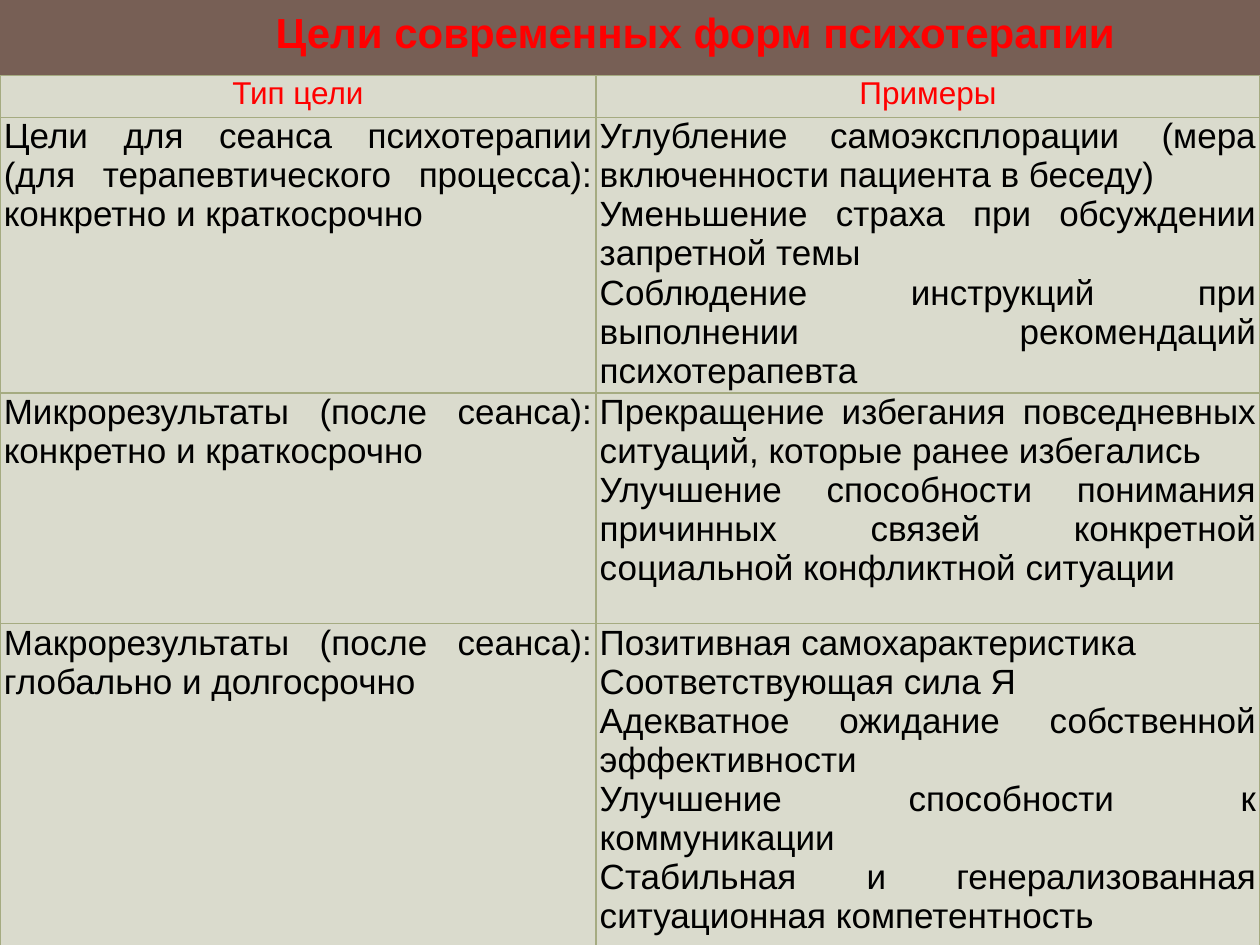
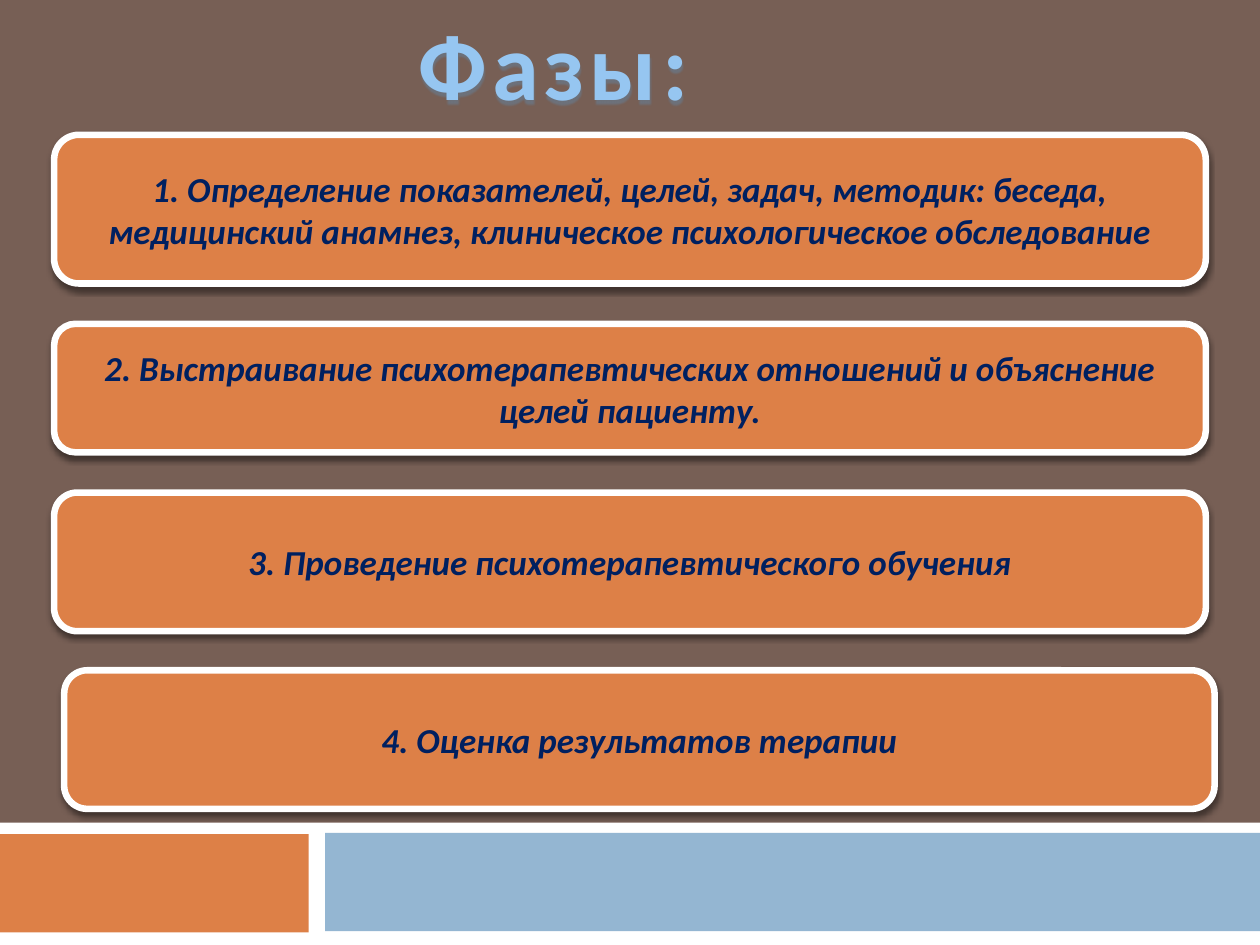
import pptx
import pptx.dml.color
import pptx.enum.shapes
import pptx.enum.text
import pptx.oxml
import pptx.oxml.ns
import pptx.util
from dataclasses import dataclass
from pptx.util import Inches

ALIGN = pptx.enum.text.PP_ALIGN
ANCHOR = pptx.enum.text.MSO_ANCHOR
SHAPE = pptx.enum.shapes.MSO_SHAPE


@dataclass(frozen=True)
class Theme:
    background: str = "775F55"
    white: str = "FFFFFF"
    orange: str = "DD8047"
    blue: str = "94B6D2"
    red: str = "FF0000"
    black: str = "000000"
    navy: str = "002060"
    cell: str = "DADBCD"
    border: str = "A5AB81"
    glow_top: str = "96C6F1"
    glow_bottom: str = "6288A7"
    glow_outline: str = "F7F9FB"
    table_font: str = "Arial"
    phase_font: str = "Calibri"
    header_size: int = 18
    body_size: int = 20
    title_size: int = 24
    display_size: int = 54


THEME = Theme()

GOALS = [
    (["Тип цели"], ["Примеры"]),
    (["Цели для сеанса психотерапии (для терапевтического процесса): конкретно и краткосрочно"],
     ["Углубление самоэксплорации (мера включенности пациента в беседу)",
      "Уменьшение страха при обсуждении запретной темы",
      "Соблюдение инструкций при выполнении рекомендаций психотерапевта"]),
    (["Микрорезультаты (после сеанса): конкретно и краткосрочно"],
     ["Прекращение избегания повседневных ситуаций, которые ранее избегались",
      "Улучшение способности понимания причинных связей конкретной социальной конфликтной ситуации"]),
    (["Макрорезультаты (после сеанса): глобально и долгосрочно"],
     ["Позитивная самохарактеристика",
      "Соответствующая сила Я",
      "Адекватное ожидание собственной эффективности",
      "Улучшение способности к коммуникации",
      "Стабильная и генерализованная ситуационная компетентность"]),
]

PHASES = [
    ((0.43, 1.07, 9.14, 1.18),
     "1. Определение показателей, целей, задач, методик: беседа, медицинский анамнез, "
     "клиническое психологическое обследование"),
    ((0.43, 2.57, 9.14, 1.02),
     "2. Выстраивание психотерапевтических отношений и объяснение целей пациенту."),
    ((0.43, 3.91, 9.14, 1.1), "3. Проведение психотерапевтического обучения"),
    ((0.51, 5.32, 9.13, 1.1), "4. Оценка результатов терапии"),
]


def rgb(color):
    return pptx.dml.color.RGBColor.from_string(color)


def drawing_xml(xml):
    namespace = pptx.oxml.ns.nsdecls("a")
    return pptx.oxml.parse_xml(xml.replace(">", f" {namespace}>", 1))


def solid_xml(color):
    return f'<a:solidFill><a:srgbClr val="{color}"/></a:solidFill>'


class Deck:
    """Builds slides in one style, element by element."""

    def __init__(self, theme):
        self.theme = theme
        self.presentation = pptx.Presentation()
        self.presentation.slide_width = Inches(10)
        self.presentation.slide_height = Inches(7.5)
        fill = self.presentation.slide_master.background.fill
        fill.solid()
        fill.fore_color.rgb = rgb(theme.background)
        self.slide = None

    def new_slide(self):
        self.slide = self.presentation.slides.add_slide(self.presentation.slide_layouts[6])
        self.shape(SHAPE.RECTANGLE, (0, 6.53, 10, 0.97), self.theme.white)
        self.shape(SHAPE.RECTANGLE, (-0.01, 6.62, 2.46, 0.78), self.theme.orange)
        self.shape(SHAPE.RECTANGLE, (2.58, 6.61, 7.42, 0.78), self.theme.blue)

    def shape(self, kind, box, color):
        shape = self.slide.shapes.add_shape(kind, *map(Inches, box))
        shape.shadow.inherit = False
        shape.fill.solid()
        shape.fill.fore_color.rgb = rgb(color)
        shape.line.fill.background()
        return shape

    def set_text(self, frame, lines, font, size, color, align, bold=False, italic=False):
        for index, line in enumerate(lines):
            paragraph = frame.add_paragraph() if index else frame.paragraphs[0]
            paragraph.text = line
            paragraph.alignment = align
            paragraph.font.name = font
            paragraph.font.size = pptx.util.Pt(size)
            paragraph.font.color.rgb = rgb(color)
            paragraph.font.bold = bold
            paragraph.font.italic = italic

    def drop_shadow(self, shape, color, blur, distance):
        shape.shadow.inherit = False
        effects = shape.element.spPr.find(pptx.oxml.ns.qn("a:effectLst"))
        effects.append(drawing_xml(
            f'<a:outerShdw blurRad="{pptx.util.Pt(blur)}" dist="{pptx.util.Pt(distance)}" '
            f'dir="5400000" rotWithShape="0"><a:srgbClr val="{color}">'
            '<a:alpha val="45000"/></a:srgbClr></a:outerShdw>'))

    def title(self, box, text, font, size, color, align, anchor):
        textbox = self.slide.shapes.add_textbox(*map(Inches, box))
        frame = textbox.text_frame
        frame.word_wrap = False
        frame.auto_size = pptx.enum.text.MSO_AUTO_SIZE.SHAPE_TO_FIT_TEXT
        frame.vertical_anchor = anchor
        self.set_text(frame, [text], font, size, color, align, bold=True)
        return textbox

    def glowing_title(self, box, text):
        theme = self.theme
        textbox = self.title(box, text, theme.phase_font, theme.display_size,
                             theme.glow_top, ALIGN.CENTER, ANCHOR.TOP)
        properties = textbox.text_frame.paragraphs[0].runs[0].font._element
        properties.set("spc", "300")
        properties.append(drawing_xml(
            f'<a:ln w="{pptx.util.Pt(0.9)}">{solid_xml(theme.glow_outline)}</a:ln>'))
        properties.append(drawing_xml(
            '<a:gradFill><a:gsLst>'
            f'<a:gs pos="10000"><a:srgbClr val="{theme.glow_top}"/></a:gs>'
            f'<a:gs pos="75000"><a:srgbClr val="{theme.glow_bottom}"/></a:gs>'
            '</a:gsLst><a:lin ang="5400000"/></a:gradFill>'))
        self.drop_shadow(textbox, theme.glow_bottom, 1, 2)

    def phase(self, box, text):
        theme = self.theme
        card = self.shape(SHAPE.ROUNDED_RECTANGLE, box, theme.orange)
        card.line.color.rgb = rgb(theme.white)
        card.line.width = pptx.util.Pt(3.75)
        self.drop_shadow(card, theme.black, 3, 2.4)
        card.text_frame.word_wrap = True
        card.text_frame.vertical_anchor = ANCHOR.MIDDLE
        self.set_text(card.text_frame, [text], theme.phase_font, theme.body_size,
                      theme.navy, ALIGN.CENTER, bold=True, italic=True)

    def cell(self, cell, lines, is_header):
        theme = self.theme
        cell.margin_left = cell.margin_right = Inches(0.03)
        cell.margin_top = cell.margin_bottom = 0
        properties = cell._tc.get_or_add_tcPr()
        for side in "LRTB":
            properties.append(drawing_xml(
                f'<a:ln{side} w="{pptx.util.Pt(0.79)}">{solid_xml(theme.border)}</a:ln{side}>'))
        cell.fill.solid()
        cell.fill.fore_color.rgb = rgb(theme.cell)
        size, color, align = (
            (theme.header_size, theme.red, ALIGN.CENTER) if is_header
            else (theme.body_size, theme.black, ALIGN.JUSTIFY))
        self.set_text(cell.text_frame, lines, theme.table_font, size, color, align)

    def table(self, box, widths, heights, rows):
        table = self.slide.shapes.add_table(
            len(rows), len(widths), *map(Inches, box)).table
        table.first_row = table.horz_banding = False
        for column, width in zip(table.columns, widths):
            column.width = Inches(width)
        for row, height, texts in zip(table.rows, heights, rows):
            row.height = Inches(height)
            for cell, lines in zip(row.cells, texts):
                self.cell(cell, lines, texts is rows[0])


def main():
    deck = Deck(THEME)

    deck.new_slide()
    deck.table((0, 0.6, 10, 6.9), (4.73, 5.27), (0.33, 2.19, 1.83, 2.56), GOALS)
    deck.title((2.09, 0, 6.93, 0.51), "Цели современных форм психотерапии",
               THEME.table_font, THEME.title_size, THEME.red, ALIGN.JUSTIFY, ANCHOR.MIDDLE)

    deck.new_slide()
    deck.glowing_title((3.19, 0, 2.62, 1.01), "Фазы: ")
    for box, text in PHASES:
        deck.phase(box, text)

    deck.presentation.save("out.pptx")


if __name__ == "__main__":
    main()
